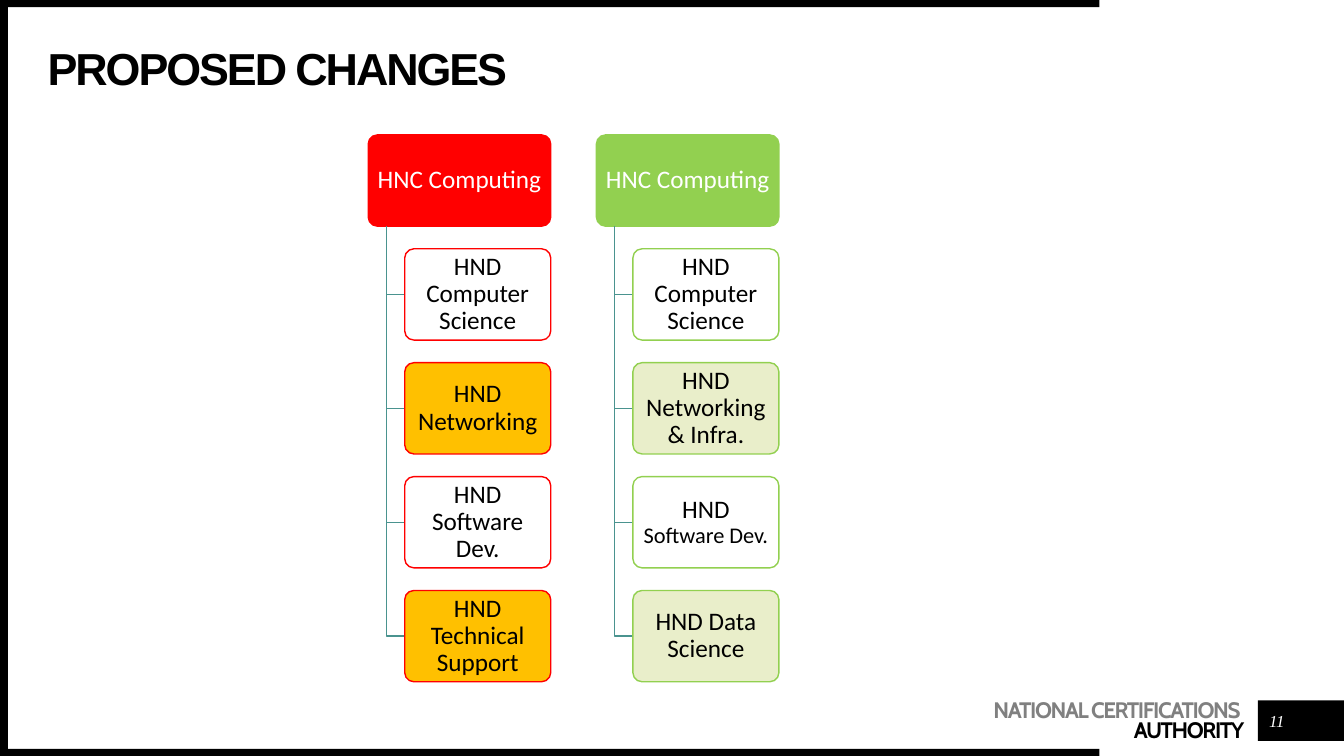
from lxml import etree
from pptx import Presentation
from pptx.dml.color import RGBColor
from pptx.enum.shapes import MSO_SHAPE
from pptx.enum.text import MSO_ANCHOR, MSO_AUTO_SIZE, PP_ALIGN
from pptx.oxml.ns import qn
from pptx.util import Cm, Pt

RECTANGLE, ROUNDED = MSO_SHAPE.RECTANGLE, MSO_SHAPE.ROUNDED_RECTANGLE
MIDDLE, NO_AUTOFIT = MSO_ANCHOR.MIDDLE, MSO_AUTO_SIZE.NONE
LEFT, CENTER, RIGHT = PP_ALIGN.LEFT, PP_ALIGN.CENTER, PP_ALIGN.RIGHT

BLACK = RGBColor(0x00, 0x00, 0x00)
WHITE = RGBColor(0xFF, 0xFF, 0xFF)
GREY = RGBColor(0x80, 0x80, 0x80)
RED = RGBColor(0xFF, 0x00, 0x00)
AMBER = RGBColor(0xFF, 0xC0, 0x00)
GREEN = RGBColor(0x92, 0xD0, 0x50)
PALE_GREEN = RGBColor(0xE7, 0xED, 0xC5)
TEAL = RGBColor(0x4A, 0x93, 0x8F)


def format_frame(frame, side=0, top=0, bottom=0, anchor=MIDDLE):
    settings = {
        "margin_left": Cm(side), "margin_right": Cm(side),
        "margin_top": Cm(top), "margin_bottom": Cm(bottom),
        "vertical_anchor": anchor, "word_wrap": True, "auto_size": NO_AUTOFIT,
    }
    for name, value in settings.items():
        setattr(frame, name, value)


def add_text(paragraph, text, color, spacing=None, **font_values):
    """Add a run; spacing is the letter spacing in points."""
    run = paragraph.add_run()
    run.text = text
    run.font.color.rgb = color
    for name, value in font_values.items():
        setattr(run.font, name, value)
    if spacing is not None:
        run.font._element.set("spc", str(int(spacing * 100)))


deck = Presentation()
deck.slide_width, deck.slide_height = Cm(33.87), Cm(19.05)
slide = deck.slides.add_slide(deck.slide_layouts[5])
shapes = slide.shapes

# Black border and page number block: left, top, width, height
for bar_place in [
    (31.7, 17.65, 2.17, 1.02),
    (0, 18.87, 27.71, 0.18),
    (0, 0, 27.71, 0.18),
    (0, 0, 0.2, 19.05),
]:
    bar = shapes.add_shape(RECTANGLE, *map(Cm, bar_place))
    bar.shadow.inherit = False
    bar.fill.solid()
    bar.fill.fore_color.rgb = BLACK
    bar.line.fill.background()

# Title
title = shapes.title
title.left, title.top, title.width, title.height = Cm(1.2), Cm(1.2), Cm(26.51), Cm(1.2)
format_frame(title.text_frame)
heading = title.text_frame.paragraphs[0]
heading.alignment, heading.line_spacing = LEFT, 0.9
add_text(heading, "PROPOSED CHANGES", BLACK, -1.5, name="Arial", size=Pt(32), bold=True)

# Hierarchy: each course has its accent, then awards as (fill, alpha, text runs)
CLEAR = (WHITE, 90)
CHANGED = (AMBER, 100)
REPLACED = (PALE_GREEN, 90)
courses = [
    (RED, [
        (CLEAR, [("HND Computer Science", 18)]),
        (CHANGED, [("HND Networking", 18)]),
        (CLEAR, [("HND Software Dev.", 18)]),
        (CHANGED, [("HND Technical Support", 18)]),
    ]),
    (GREEN, [
        (CLEAR, [("HND Computer Science", 18)]),
        (REPLACED, [("HND Networking & Infra.", 18)]),
        (CLEAR, [("HND", 18), (" Software Dev.", 16)]),
        (REPLACED, [("HND Data Science", 18)]),
    ]),
]
FIRST_LEFT, COLUMN_STEP = 9.28, 5.75
FIRST_TOP, ROW_STEP = 3.4, 2.87
COURSE_WIDTH, BOX_HEIGHT = 4.6, 2.3
INDENT = 0.92

for column, (accent, awards) in enumerate(courses):
    course_left = FIRST_LEFT + column * COLUMN_STEP
    spine = course_left + INDENT / 2
    boxes = [((accent, 100), [("HNC Computing", 18)])] + awards
    for row, ((fill, alpha), runs) in enumerate(boxes):
        indent = INDENT if row else 0
        left, top = course_left + indent, FIRST_TOP + row * ROW_STEP
        if row:
            middle = Cm(top + BOX_HEIGHT / 2)
            builder = shapes.build_freeform(Cm(spine), Cm(FIRST_TOP + BOX_HEIGHT))
            builder.add_line_segments([(Cm(spine), middle), (Cm(left), middle)], close=False)
            branch = builder.convert_to_shape()
            branch.shadow.inherit = False
            branch.fill.background()
            branch.line.color.rgb = TEAL
            branch.line.width = Pt(1)

        box = shapes.add_shape(
            ROUNDED, Cm(left), Cm(top), Cm(COURSE_WIDTH - indent), Cm(BOX_HEIGHT))
        box.adjustments[0] = 0.1
        box.shadow.inherit = False
        box.fill.solid()
        box.fill.fore_color.rgb = fill
        if alpha < 100:
            fill_color = box._element.spPr.find(qn("a:solidFill"))[0]
            etree.SubElement(fill_color, qn("a:alpha")).set("val", str(alpha * 1000))
        box.line.color.rgb = accent
        box.line.width = Pt(1)
        format_frame(box.text_frame, side=0.1, top=0.07, bottom=0.07)
        label = box.text_frame.paragraphs[0]
        label.alignment, label.line_spacing = CENTER, 0.9
        for text, size in runs:
            add_text(label, text, BLACK if row else WHITE, name="Calibri", size=Pt(size))

# Footer: organisation and page number
organisation = shapes.add_textbox(Cm(24.71), Cm(17.63), Cm(6.65), Cm(1.12)).text_frame
format_frame(organisation, top=0.1, anchor=MSO_ANCHOR.TOP)
for line, (text, color) in enumerate([("NATIONAL CERTIFICATIONS ", GREY), ("AUTHORITY", BLACK)]):
    paragraph = organisation.add_paragraph() if line else organisation.paragraphs[0]
    paragraph.alignment, paragraph.line_spacing = RIGHT, Pt(14)
    add_text(paragraph, text, color, -1, name="Cabin", size=Pt(16), bold=True)

page_number = shapes.add_textbox(Cm(31.8), Cm(17.78), Cm(0.76), Cm(0.76)).text_frame
format_frame(page_number)
page_number.paragraphs[0].alignment = CENTER
add_text(page_number.paragraphs[0], "11", WHITE,
         name="Times New Roman", size=Pt(12), italic=True)

deck.save("out.pptx")
